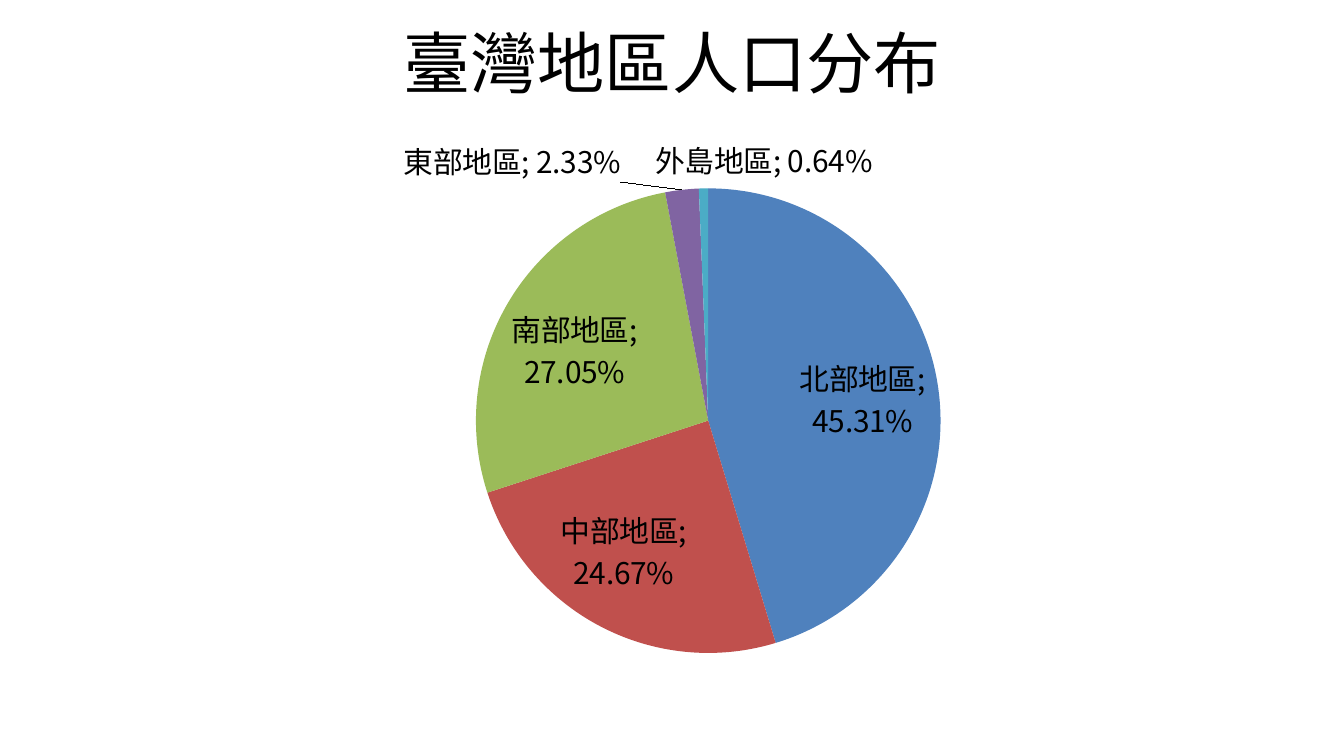
from pptx import Presentation
from pptx.chart.data import CategoryChartData
from pptx.dml.color import RGBColor
from pptx.enum.chart import XL_CHART_TYPE, XL_LABEL_POSITION
from pptx.enum.text import MSO_ANCHOR, PP_ALIGN
from pptx.oxml import parse_xml
from pptx.oxml.ns import nsdecls, qn
from pptx.util import Inches, Pt

CJK = "Noto Sans CJK SC"
REGIONS = [
    ("北部地區", 0.4531, "4F81BD"),
    ("中部地區", 0.2467, "C0504D"),
    ("南部地區", 0.2705, "9BBB59"),
    ("東部地區", 0.0233, "8064A2"),
    ("外島地區", 0.0064, "4BACC6"),
]
# Label shifts of the thin slices, as fractions of the chart size
SHIFTS = {3: (-0.05, 0), 4: (0.05, 0)}


def paint(item, color):
    item.rgb = RGBColor.from_string(color)


def style(font, size, name=CJK):
    font.size = Pt(size)
    font.name = name
    paint(font.color, "000000")


def set_asian(root):
    """Give East Asian text the same typeface as Latin text."""
    for latin in list(root.iter(qn("a:latin"))):
        face = latin.get("typeface")
        latin.addnext(parse_xml(f'<a:ea {nsdecls("a")} typeface="{face}"/>'))


def make_layout(**parts):
    body = "".join(f'<c:{key} val="{val}"/>' for key, val in parts.items())
    return parse_xml(f'<c:layout {nsdecls("c")}><c:manualLayout>{body}'
                     '</c:manualLayout></c:layout>')


def add_title(slide, text):
    title = slide.shapes.title
    title.left, title.top = Inches(0.5), Inches(0.07)
    title.width, title.height = Inches(9), Inches(0.78)
    frame = title.text_frame
    frame.text = text
    frame.vertical_anchor = MSO_ANCHOR.MIDDLE
    par = frame.paragraphs[0]
    par.alignment = PP_ALIGN.CENTER
    style(par.runs[0].font, 36)
    set_asian(title.element)


def place_plot(root):
    area = root.find(".//" + qn("c:plotArea"))
    for old in area.findall(qn("c:layout")):
        area.remove(old)
    area.insert(0, make_layout(layoutTarget="inner", xMode="edge", yMode="edge",
                               x=0.08, y=0.1, w=0.9, h=0.86))


def add_labels(series, root):
    labels = series.data_labels
    style(labels.font, 16)
    labels.show_value = labels.show_category_name = True
    labels.number_format = "0.00%"
    labels.number_format_is_linked = False
    labels.position = XL_LABEL_POSITION.BEST_FIT
    for index in SHIFTS:
        label = series.points[index].data_label
        style(label.font, 16)
        label.position = XL_LABEL_POSITION.OUTSIDE_END
    for node, (x, y) in zip(root.iter(qn("c:dLbl")), SHIFTS.values()):
        node.find(qn("c:showCatName")).set("val", "1")
        layout = make_layout(x=x, y=y)
        node.find(qn("c:idx")).addnext(layout)
        layout.addnext(parse_xml(f'<c:numFmt {nsdecls("c")} formatCode="0.00%" '
                                 'sourceLinked="0"/>'))
    for size in list(root.iter(qn("c:showBubbleSize"))):
        size.addnext(parse_xml(f'<c:separator {nsdecls("c")}>; </c:separator>'))


def add_pie(slide):
    data = CategoryChartData(number_format="0.00%")
    data.categories = [name for name, _, _ in REGIONS]
    data.add_series("Series 1", [share for _, share, _ in REGIONS])
    chart = slide.shapes.add_chart(
        XL_CHART_TYPE.PIE, Inches(0.5), Inches(1), Inches(9), Inches(4.02), data
    ).chart
    chart.has_title = chart.has_legend = False
    style(chart.font, 18, "Calibri")
    series = chart.plots[0].series[0]
    for index, (_, _, color) in enumerate(REGIONS):
        fill = series.points[index].format.fill
        fill.solid()
        paint(fill.fore_color, color)
    add_labels(series, chart.element)
    place_plot(chart.element)
    set_asian(chart.element)


def main():
    deck = Presentation()
    deck.slide_width = Inches(10)
    deck.slide_height = deck.slide_width * 9 // 16
    slide = deck.slides.add_slide(deck.slide_layouts[5])
    add_pie(slide)
    add_title(slide, "臺灣地區人口分布")
    deck.save("out.pptx")


if __name__ == "__main__":
    main()
